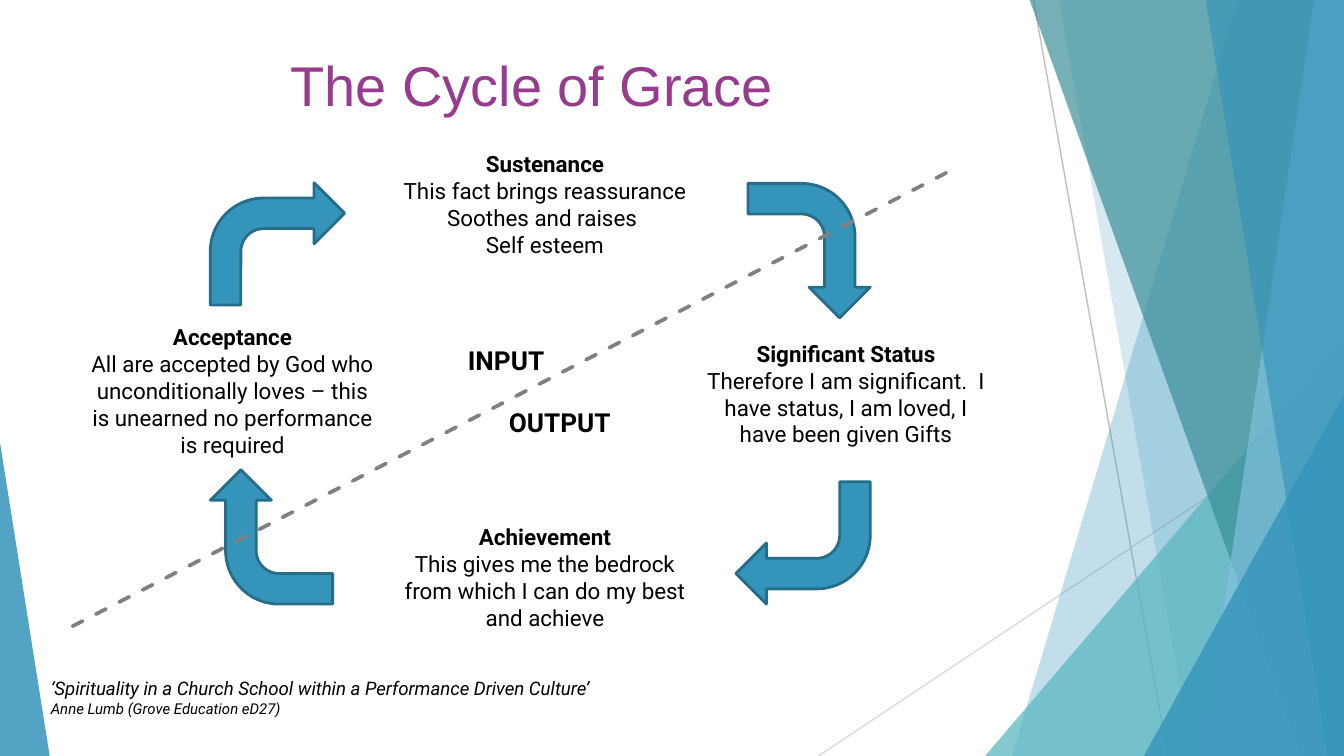
from pptx import Presentation
from pptx.dml.color import RGBColor
from pptx.enum.dml import MSO_LINE
from pptx.enum.shapes import MSO_CONNECTOR, MSO_SHAPE
from pptx.enum.text import MSO_ANCHOR, PP_ALIGN
from pptx.oxml.ns import qn
from pptx.util import Pt
from lxml.etree import SubElement

PX = 4572  # 200 px to the inch
W, H = 2000, 1125
BLUE, EDGE, BLACK = "3494BA", "266D8A", "000000"

TITLE = "The Cycle of Grace"

# Background, back to front
RAYS = [(1538, 0, 1738, 1125, "BFBFBF"), (2000, 604, 1218, 1125, "D9D9D9")]
# band: top x, bottom x, colour, opacity (each reaches the right edge)
# corner: left, top, width, apex, colour, opacity (each reaches the bottom)
FACETS = [
    ("band", 1842, 1506, BLUE, 30),
    ("band", 1576, 1774, BLUE, 20),
    ("corner", 1466, 500, 534, 1, "58B6C0", 72),
    ("band", 1532, 1936, "3A8F98", 70),
    ("band", 1956, 1788, "7FC1DB", 70),
    ("band", 1794, 1976, BLUE, 65),
    ("corner", 1702, 588, 298, 1, BLUE, 80),
    ("corner", 0, 658, 74, 0, BLUE, 85),
]

# Stages: left, top, height, heading, lines
STAGES = [
    (573, 214, 182, "Sustenance",
     ["This fact brings reassurance", "Soothes and raises ", "Self esteem"]),
    (1021, 496, 182, "Significant Status",
     ["Therefore I am significant.  I have status, I am loved, I have been given Gifts"]),
    (573, 769, 182, "Achievement",
     ["This gives me the bedrock from which I can do my best and achieve"]),
    (108, 471, 222, "Acceptance",
     ["All are accepted by God who unconditionally loves – this is unearned "
      "no performance is required"]),
]
ARROWS = [(313, 272, 0), (1095, 717, 180), (1104, 282, 90), (304, 708, 270)]
DIVIDER = (108, 932, 1422, 250)
LABELS = [(658, 503, 190, "INPUT"), (734, 595, 198, "OUTPUT")]
SOURCE = [("‘Spirituality in a Church School within a Performance Driven Culture’", 10),
          ("Anne Lumb (Grove Education eD27)", 8)]


def px(*values):
    return [v * PX for v in values]


def rgb(color):
    return RGBColor.from_string(color)


def paint(sp, color, opacity=100):
    sp.shadow.inherit = False
    sp.fill.solid()
    sp.fill.fore_color.rgb = rgb(color)
    sp.line.fill.background()
    if opacity < 100:
        clr = sp._element.spPr.find(".//" + qn("a:srgbClr"))
        SubElement(clr, qn("a:alpha")).set("val", str(opacity * 1000))


def add_line(s, x1, y1, x2, y2, color, width):
    line = s.shapes.add_connector(MSO_CONNECTOR.STRAIGHT, *px(x1, y1, x2, y2))
    line.line.color.rgb = rgb(color)
    line.line.width = Pt(width)
    SubElement(line._element.spPr, qn("a:effectLst"))
    return line


def add_run(p, text, size, color=BLACK, font="Roboto", bold=False, italic=False):
    r = p.add_run()
    r.text = text
    f = r.font
    f.name, f.size, f.bold, f.italic = font, Pt(size), bold, italic
    f.color.rgb = rgb(color)


def add_text(s, box, lines, align=PP_ALIGN.CENTER):
    """Each line is (text, size, bold, italic)."""
    tf = s.shapes.add_textbox(*px(*box)).text_frame
    tf.word_wrap = True
    for i, (text, size, bold, italic) in enumerate(lines):
        p = tf.add_paragraph() if i else tf.paragraphs[0]
        p.alignment = align
        add_run(p, text, size, bold=bold, italic=italic)


prs = Presentation()
prs.slide_width, prs.slide_height = px(W, H)
s = prs.slides.add_slide(prs.slide_layouts[5])

# Background facets
for ray in RAYS:
    add_line(s, *ray, 0.75)
for kind, *geometry, color, opacity in FACETS:
    if kind == "band":
        top, bottom = geometry
        fb = s.shapes.build_freeform(top, -1, scale=PX)
        fb.add_line_segments([(W, -1), (W, H), (bottom, H)], close=True)
        sp = fb.convert_to_shape()
    else:
        x, y, w, apex = geometry
        sp = s.shapes.add_shape(MSO_SHAPE.ISOSCELES_TRIANGLE, *px(x, y, w, H - y))
        sp.adjustments[0] = apex
    paint(sp, color, opacity)

# Title
title = s.shapes.title
title.left, title.top, title.width, title.height = px(287, 64, 1008, 122)
tf = title.text_frame
tf.vertical_anchor = MSO_ANCHOR.BOTTOM
p = tf.paragraphs[0]
p.alignment = PP_ALIGN.CENTER
p.space_before = Pt(0)
add_run(p, TITLE, 30, "973B8E", "Arial")

# Stages of the cycle
for x, y, h, heading, lines in STAGES:
    add_text(s, (x, y, 476, h),
             [(heading, 12, True, False)] + [(t, 12, False, False) for t in lines])

# Arrows between stages
for x, y, angle in ARROWS:
    sp = s.shapes.add_shape(MSO_SHAPE.BENT_ARROW, *px(x, y, 200, 182))
    paint(sp, BLUE)
    sp.line.color.rgb = rgb(EDGE)
    sp.line.width = Pt(1.5)
    sp.rotation = angle

# Source, divider and its two labels
add_text(s, (56, 998, 994, 80), [(t, size, False, True) for t, size in SOURCE],
         PP_ALIGN.LEFT)
divider = add_line(s, *DIVIDER, "808080", 2)
divider.line.dash_style = MSO_LINE.DASH
divider._element.spPr.find(qn("a:ln")).set("cap", "rnd")
for x, y, w, text in LABELS:
    add_text(s, (x, y, w, 68), [(text, 14, True, False)])

prs.save("out.pptx")
